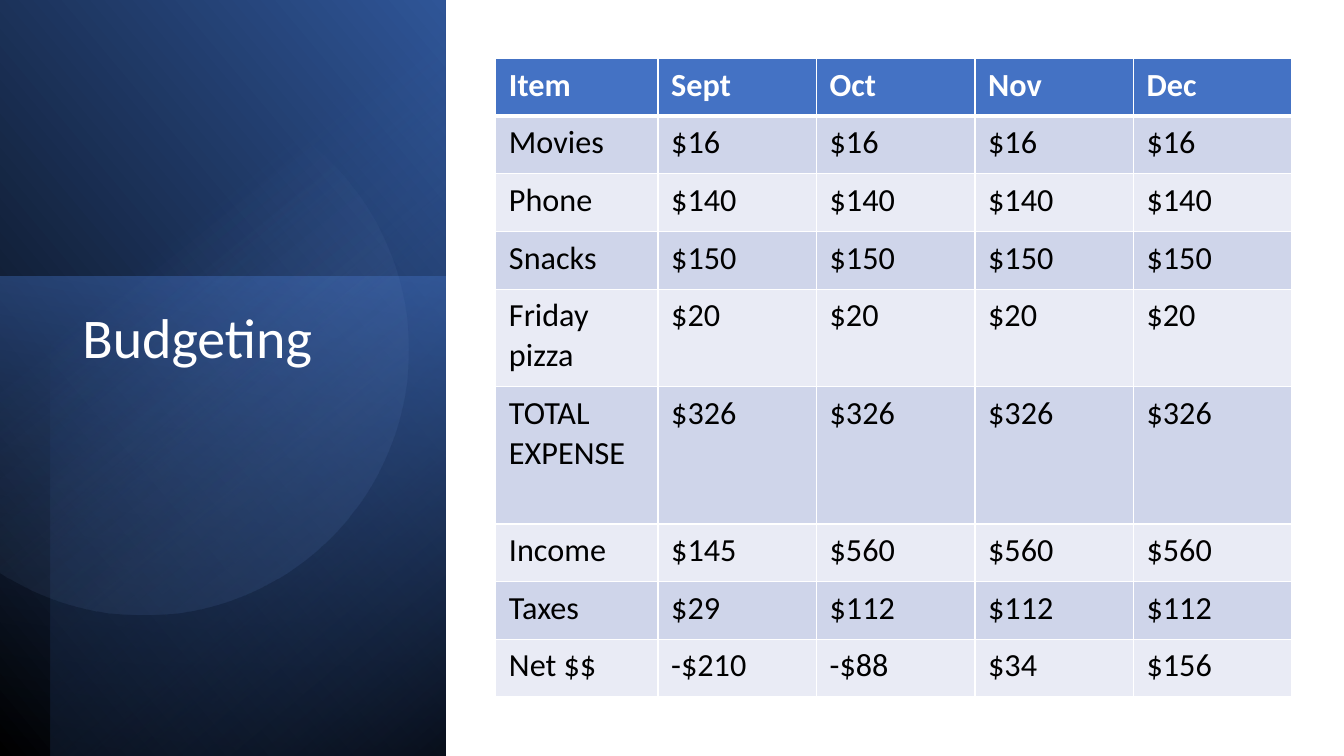
from math import acos, cos, degrees, radians, sin

from lxml.etree import SubElement
from pptx import Presentation
from pptx.dml.color import RGBColor
from pptx.enum.shapes import MSO_SHAPE
from pptx.oxml import parse_xml
from pptx.oxml.ns import nsdecls, qn
from pptx.util import Pt

FONT = "Calibri"
COLORS = {
    "black": "000000",
    "white": "FFFFFF",
    "blue": "4472C4",
    "deep_blue": "2F5597",
    "navy": "203864",
    "pale_blue": "8FAADC",
    "band_dark": "CFD5EA",
    "band_light": "E9EBF5",
}

BUDGET = [
    ("Item", "Sept", "Oct", "Nov", "Dec"),
    ("Movies", "$16", "$16", "$16", "$16"),
    ("Phone", "$140", "$140", "$140", "$140"),
    ("Snacks", "$150", "$150", "$150", "$150"),
    ("Friday pizza", "$20", "$20", "$20", "$20"),
    ("TOTAL EXPENSE", "$326", "$326", "$326", "$326"),
    ("Income", "$145", "$560", "$560", "$560"),
    ("Taxes", "$29", "$112", "$112", "$112"),
    ("Net $$", "-$210", "-$88", "$34", "$156"),
]
ROW_HEIGHT = 41.2
TALL_ROWS = {4: 69.8, 5: 97.9}
ITEM_WIDTH, MONTH_WIDTH = 115.9, 113.2


def write_text(frame, text, size, color, bold=False, line_spacing=None):
    frame.word_wrap = True
    paragraph = frame.paragraphs[0]
    if line_spacing:
        paragraph.line_spacing = line_spacing
    run = paragraph.add_run()
    run.text = text
    run.font.name = FONT
    run.font.size = Pt(size)
    run.font.bold = bold
    run.font.color.rgb = RGBColor.from_string(COLORS[color])


def set_gradient(shape, stops, angle):
    """Fill with stops of (position %, colour, opacity %)."""
    shape.shadow.inherit = False
    shape.line.fill.background()
    gradient = parse_xml(f'<a:gradFill {nsdecls("a")} rotWithShape="1"/>')
    stop_list = SubElement(gradient, qn("a:gsLst"))
    for position, color, opacity in stops:
        stop = SubElement(stop_list, qn("a:gs"), pos=str(position * 1000))
        tint = SubElement(stop, qn("a:srgbClr"), val=COLORS[color])
        if opacity < 100:
            SubElement(tint, qn("a:alpha"), val=str(opacity * 1000))
    SubElement(gradient, qn("a:lin"), ang=str(angle * 60000), scaled="0")
    shape.fill.background()
    properties = shape._element.spPr
    properties.replace(properties.find(qn("a:noFill")), gradient)


def add_panel(slide, box, rotation, stops, angle, flip=False):
    panel = slide.shapes.add_shape(MSO_SHAPE.RECTANGLE, *map(Pt, box))
    panel.rotation = rotation
    if flip:
        panel._element.spPr.find(qn("a:xfrm")).set("flipH", "1")
    set_gradient(panel, stops, angle)


def add_cut_disc(slide, center, radius, cut, rotation, stops, angle):
    """Disc with its part beyond the distance cut, left of the centre, removed."""
    half_arc = degrees(acos(-cut / radius))
    steps = 120
    points = []
    for step in range(steps + 1):
        turn = radians(-half_arc + 2 * half_arc * step / steps - rotation)
        points.append((Pt(center[0] + radius * cos(turn)),
                       Pt(center[1] + radius * sin(turn))))
    builder = slide.shapes.build_freeform(*points[0], scale=1.0)
    builder.add_line_segments(points[1:], close=True)
    disc = builder.convert_to_shape()
    disc.rotation = rotation
    set_gradient(disc, stops, angle)


def add_title(slide, text, box):
    title = slide.shapes.add_textbox(*map(Pt, box))
    write_text(title.text_frame, text, size=40, color="white", line_spacing=0.9)


def set_borders(cell, bottom):
    widths = {"a:lnL": 1, "a:lnR": 1, "a:lnT": 1, "a:lnB": bottom}
    properties = cell._tc.get_or_add_tcPr()
    for tag, width in widths.items():
        line = SubElement(properties, qn(tag), w=str(Pt(width)))
        fill = SubElement(line, qn("a:solidFill"))
        SubElement(fill, qn("a:srgbClr"), val=COLORS["white"])


def format_cell(cell, text, row):
    header = row == 0
    cell.margin_left = cell.margin_right = Pt(9.4)
    cell.margin_top = cell.margin_bottom = Pt(5)
    write_text(cell.text_frame, text, size=23, bold=header,
               color="white" if header else "black")
    set_borders(cell, bottom=3 if header else 1)
    band = "blue" if header else "band_dark" if row % 2 else "band_light"
    cell.fill.solid()
    cell.fill.fore_color.rgb = RGBColor.from_string(COLORS[band])


def add_budget_table(slide, left, top):
    heights = [TALL_ROWS.get(row, ROW_HEIGHT) for row in range(len(BUDGET))]
    widths = [ITEM_WIDTH] + [MONTH_WIDTH] * (len(BUDGET[0]) - 1)
    budget = slide.shapes.add_table(
        len(heights), len(widths), Pt(left), Pt(top),
        Pt(sum(widths)), Pt(sum(heights))).table
    for column, width in zip(budget.columns, widths):
        column.width = Pt(width)
    for row, (height, entries) in enumerate(zip(heights, BUDGET)):
        budget.rows[row].height = Pt(height)
        for column, entry in enumerate(entries):
            format_cell(budget.cell(row, column), entry, row)


def main():
    deck = Presentation()
    deck.slide_width, deck.slide_height = Pt(960), Pt(540)
    slide = deck.slides.add_slide(deck.slide_layouts[6])

    # Side panel: base, glow and corner shade
    add_panel(slide, (-111.6, 111.6, 541.4, 318.2), 90,
              [(0, "black", 100), (100, "deep_blue", 100)], 310, flip=True)
    add_panel(slide, (-12.2, 209.5, 342.7, 318.2), 270,
              [(0, "blue", 50), (100, "navy", 0)], 190)
    add_panel(slide, (-92.9, 128.9, 540, 282.2), 270,
              [(0, "black", 59), (69, "blue", 0)], 220, flip=True)

    # Translucent disc, cut at the slide's left edge
    add_cut_disc(slide, (130.3, 283.3), 189, 103, 101.6,
                 [(39, "pale_blue", 0), (100, "deep_blue", 26)], 310)

    # Title and budget
    add_title(slide, "Budgeting", (51.8, 218.2, 226.8, 241.9))
    add_budget_table(slide, 354.2, 41.8)

    deck.save("out.pptx")


if __name__ == "__main__":
    main()
